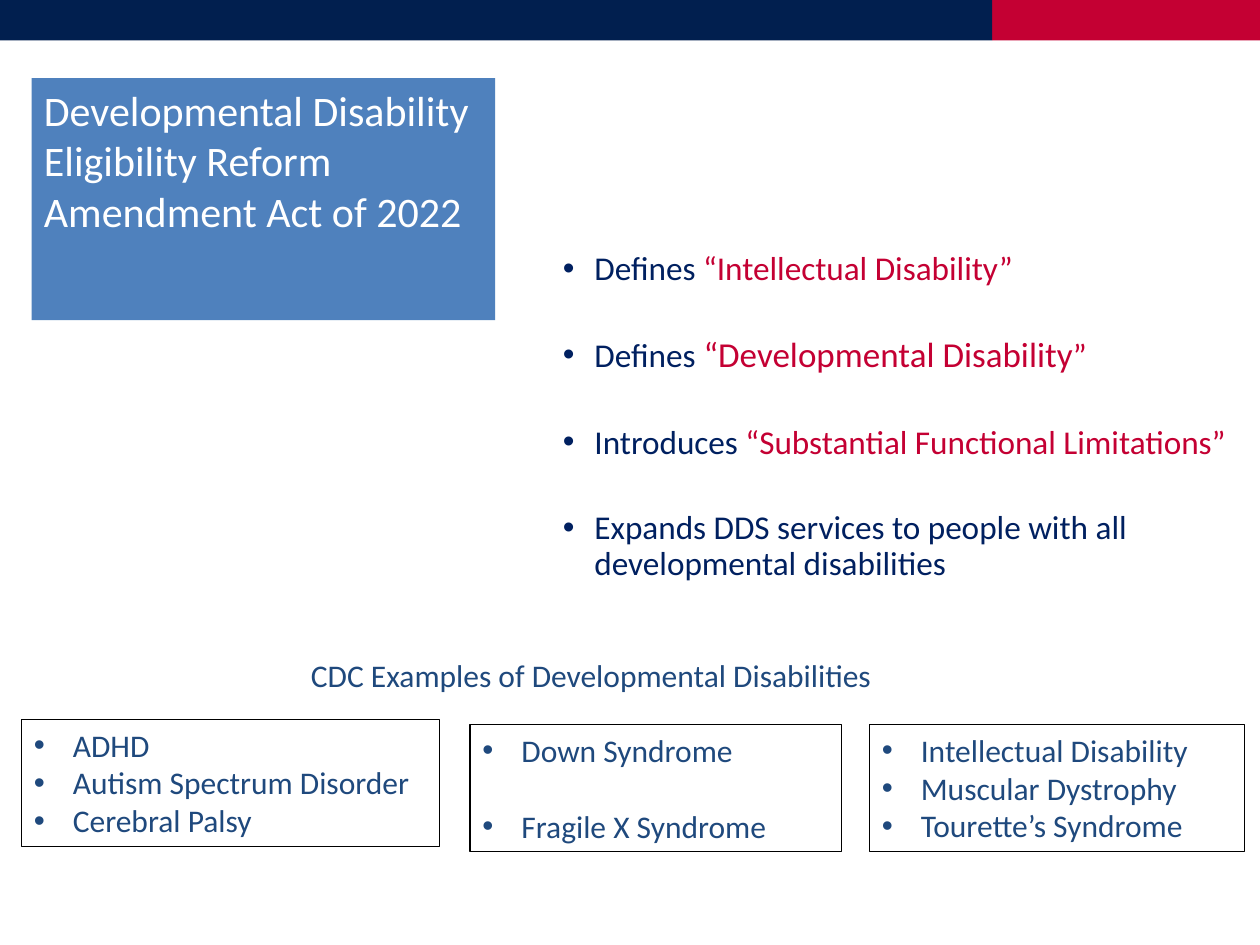
from dataclasses import dataclass

from lxml.etree import SubElement
from pptx import Presentation
from pptx.dml.color import RGBColor
from pptx.enum.shapes import MSO_SHAPE as Preset
from pptx.enum.text import MSO_ANCHOR as Anchor, PP_ALIGN as Align
from pptx.oxml.ns import qn
from pptx.util import Inches, Pt

COLUMNS, ROWS = 100, 75


@dataclass(frozen=True)
class Theme:
    font: str = "Calibri"
    navy: str = "011F4F"
    red: str = "C40033"
    panel: str = "4F81BD"
    white: str = "FFFFFF"
    black: str = "000000"
    point: str = "002060"
    example: str = "1F497D"
    title_size: int = 24
    point_size: int = 19
    large_point_size: int = 20
    example_size: int = 18
    border: float = 0.75


@dataclass(frozen=True)
class Area:
    column: float
    row: float
    columns: float
    rows: float


@dataclass(frozen=True)
class Span:
    text: str
    color: str
    size: int


@dataclass(frozen=True)
class Bullet:
    margin: float
    hanging: float


@dataclass(frozen=True)
class ExampleBox:
    area: Area
    items: tuple[str, ...]
    gap: float = 0


THEME = Theme()
POINT_BULLET = Bullet(0.56, 0.25)
EXAMPLE_BULLET = Bullet(0.31, 0.31)

BARS = (
    (Area(78.75, 0, 21.25, 3.2), THEME.red),
    (Area(0, 0, 78.75, 3.2), THEME.navy),
)


def point(text: str, color: str = THEME.point, size: int = THEME.point_size) -> Span:
    return Span(text, color, size)


POINTS = (
    (point("Defines "), point("“Intellectual Disability”", THEME.red)),
    (
        point("Defines"),
        point(" ", size=THEME.large_point_size),
        point("“Developmental Disability", THEME.red, THEME.large_point_size),
        point("”", THEME.red),
    ),
    (point("Introduces "), point("“Substantial Functional Limitations”", THEME.red)),
    (point("Expands DDS services to people with all developmental disabilities"),),
)

EXAMPLES = (
    ExampleBox(Area(1.7, 57.1, 33.2, 10.1), ("ADHD", "Autism Spectrum Disorder", "Cerebral Palsy")),
    ExampleBox(Area(37.3, 57.5, 29.5, 10.1), ("Down Syndrome", "Fragile X Syndrome"), gap=22),
    ExampleBox(
        Area(69, 57.5, 29.8, 10.1),
        ("Intellectual Disability", "Muscular Dystrophy", "Tourette’s Syndrome"),
    ),
)


def place(presentation, area: Area) -> tuple[int, int, int, int]:
    column = presentation.slide_width / COLUMNS
    row = presentation.slide_height / ROWS
    return (
        round(area.column * column),
        round(area.row * row),
        round(area.columns * column),
        round(area.rows * row),
    )


def add_rectangle(presentation, slide, area: Area, fill: str = "", line: str = ""):
    shape = slide.shapes.add_shape(Preset.RECTANGLE, *place(presentation, area))
    shape.shadow.inherit = False
    if fill:
        shape.fill.solid()
        shape.fill.fore_color.rgb = RGBColor.from_string(fill)
    else:
        shape.fill.background()
    if line:
        shape.line.color.rgb = RGBColor.from_string(line)
        shape.line.width = Pt(THEME.border)
    else:
        shape.line.fill.background()
    return shape


def add_bullet(paragraph, bullet: Bullet) -> None:
    properties = paragraph._p.get_or_add_pPr()
    properties.set("marL", str(Inches(bullet.margin)))
    properties.set("indent", str(-Inches(bullet.hanging)))
    SubElement(properties, qn("a:buFont"), typeface="Arial")
    SubElement(properties, qn("a:buChar"), char="•")


def write(
    shape,
    lines: tuple[tuple[Span, ...], ...],
    bullet: Bullet | None = None,
    gap: float = 0,
    line_spacing: float = 1,
) -> None:
    frame = shape.text_frame
    frame.word_wrap = True
    frame.vertical_anchor = Anchor.TOP
    for index, spans in enumerate(lines):
        paragraph = frame.add_paragraph() if index else frame.paragraphs[0]
        if bullet:
            add_bullet(paragraph, bullet)
        paragraph.alignment = Align.LEFT
        paragraph.line_spacing = line_spacing
        paragraph.space_before = Pt(gap if index else 0)
        for span in spans:
            run = paragraph.add_run()
            run.text = span.text
            run.font.name = THEME.font
            run.font.size = Pt(span.size)
            run.font.color.rgb = RGBColor.from_string(span.color)


def main() -> None:
    presentation = Presentation()
    presentation.slide_width = Inches(10)
    presentation.slide_height = Inches(7.5)
    slide = presentation.slides.add_slide(presentation.slide_layouts[6])

    for area, color in BARS:
        add_rectangle(presentation, slide, area, fill=color)

    title = add_rectangle(presentation, slide, Area(2.5, 6.2, 36.8, 19.2), fill=THEME.panel)
    title_text = "Developmental Disability Eligibility Reform Amendment Act of 2022"
    write(title, ((Span(title_text, THEME.white, THEME.title_size),),))

    points = slide.shapes.add_textbox(*place(presentation, Area(40.6, 15.8, 58.2, 32.6)))
    points.text_frame.margin_top = Inches(0.42)
    write(points, POINTS, POINT_BULLET, gap=28.5, line_spacing=0.9)

    heading = slide.shapes.add_textbox(*place(presentation, Area(23.7, 51.6, 64.4, 4)))
    heading_text = "CDC Examples of Developmental Disabilities"
    write(heading, ((Span(heading_text, THEME.example, THEME.example_size),),))

    for box in EXAMPLES:
        shape = add_rectangle(presentation, slide, box.area, line=THEME.black)
        items = tuple((Span(item, THEME.example, THEME.example_size),) for item in box.items)
        write(shape, items, EXAMPLE_BULLET, gap=box.gap)

    presentation.save("out.pptx")


if __name__ == "__main__":
    main()
